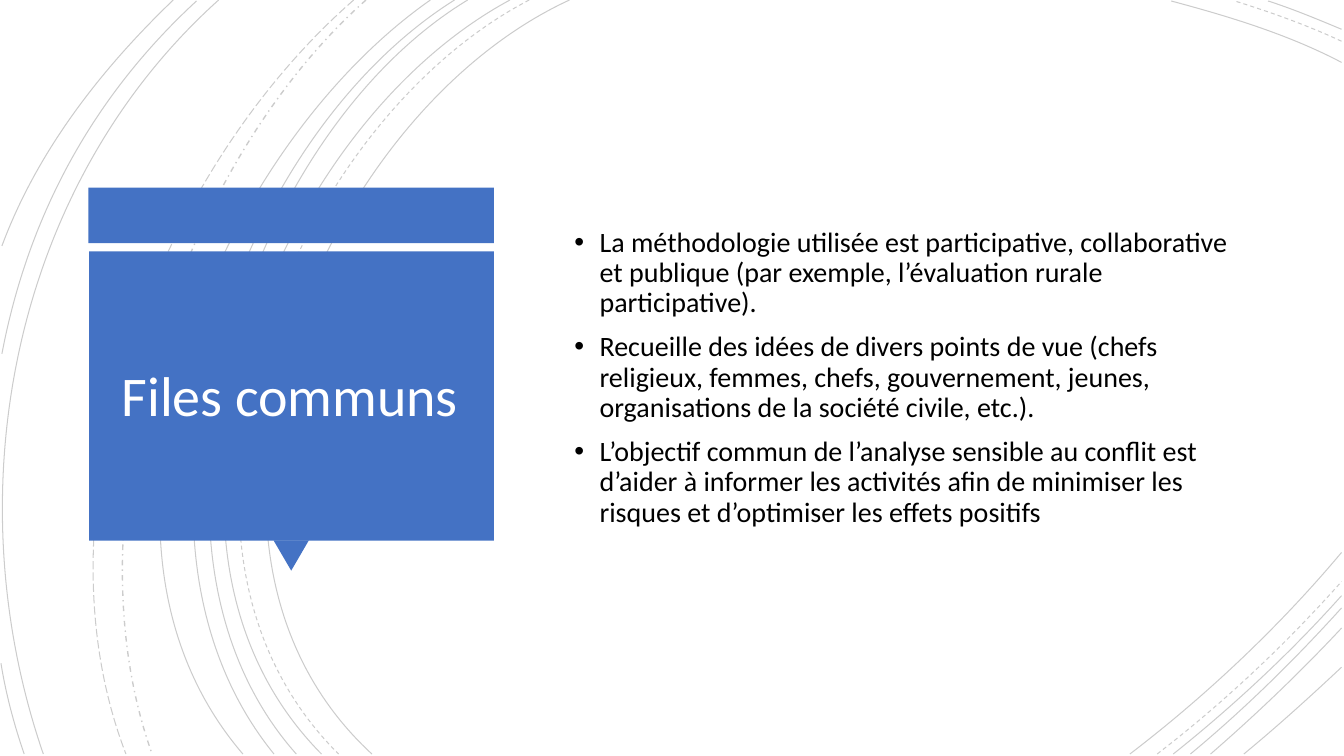
import pptx
import pptx.dml.color
import pptx.enum.dml
import pptx.enum.shapes
import pptx.enum.text
import pptx.oxml
import pptx.oxml.ns
import pptx.util
from lxml import etree

Pt = pptx.util.Pt
qn = pptx.oxml.ns.qn
DASH = pptx.enum.dml.MSO_LINE
SHAPE = pptx.enum.shapes.MSO_SHAPE
ALIGN = pptx.enum.text.PP_ALIGN

FONT = "Calibri"
BLUE, WHITE, BLACK = "4472C4", "FFFFFF", "000000"
RIGHT, BOTTOM = 958.3, 538.6  # where the arcs leave the slide

TITLE = "Files communs"
POINTS = [
    "La méthodologie utilisée est participative, collaborative et publique "
    "(par exemple, l’évaluation rurale participative).",
    "Recueille des idées de divers points de vue (chefs religieux, femmes, chefs, "
    "gouvernement, jeunes, organisations de la société civile, etc.).",
    "L’objectif commun de l’analyse sensible au conflit est d’aider à informer les "
    "activités afin de minimiser les risques et d’optimiser les effets positifs",
]

# Each arc: start, two control points, end (x, y pairs), by dash style and width
ARCS = {
    (DASH.SOLID, 0.75): [
        # Long arcs on the left
        (406.8, 0, 226.8, 82.8, 103, 388.8, 265.7, BOTTOM),
        (364.3, 0, 194.4, 91.4, 79.2, 386.6, 229.7, BOTTOM),
        (334.1, 0, 175.7, 95.8, 79.2, 389.5, 211.7, BOTTOM),
        (324.7, 0, 166.3, 99.4, 69.8, 383.8, 195.8, BOTTOM),
        (307.4, 0, 156.2, 105.8, 38.2, 380.9, 173.5, BOTTOM),
        (156.2, 0, 7.9, 133.2, -33.1, 352.8, 31, BOTTOM),
        # Short arcs at the left edge
        (140.4, 0.7, 66.2, 69.1, 20.2, 154.1, 1.4, 252.7),
        (0.7, 473.8, 4.3, 496.1, 10.1, 517.7, 17.3, BOTTOM),
        (123.8, 0, 72, 49.7, 26.6, 108, 1.4, 175.7),
        # Top right corner
        (RIGHT, 44.6, 920.2, 24.5, 877, 11.5, 836.6, 0.7),
        (RIGHT, 20.9, 941, 13.7, 923.8, 6.5, 905.8, 0.7),
        # Bottom right corner
        (807.1, BOTTOM, 861.8, 496.8, 913.7, 447.8, RIGHT, 394.6),
        (838.1, BOTTOM, 880.6, 504.7, 921.6, 466.6, RIGHT, 425.5),
        (850.3, BOTTOM, 888.5, 506.9, 924.5, 471.6, RIGHT, 434.2),
        (864.7, BOTTOM, 897.1, 510.5, 928.8, 480.2, RIGHT, 448.6),
        (888.5, BOTTOM, 912.2, 519.1, 935.3, 498.2, RIGHT, 476.6),
    ],
    (DASH.DASH, 0.75): [
        (378, 0, 205.2, 90, 88.6, 386.6, 241.9, BOTTOM),
        (RIGHT, 29.5, 933.8, 18, 907.2, 8.6, 882, 0.7),
        (826.6, BOTTOM, 873.4, 502.6, 918, 460.8, RIGHT, 415.4),
    ],
    (DASH.DASH_DOT, 1): [(261.4, 0, 126.7, 119.5, 46.8, 366.5, 108.7, BOTTOM)],
    (DASH.LONG_DASH, 0.75): [(252.7, 0, 113, 121.7, 20.9, 359.3, 90, BOTTOM)],
}


def color(hex_code):
    return pptx.dml.color.RGBColor.from_string(hex_code)


def add_arc(slide, coords, dash, width):
    start, *rest = [(Pt(x), Pt(y)) for x, y in zip(coords[::2], coords[1::2])]
    builder = slide.shapes.build_freeform(*start, scale=1.0)
    builder.add_line_segments(rest, close=False)
    arc = builder.convert_to_shape()
    arc.shadow.inherit = False
    arc.fill.background()
    arc.line.color.rgb = color(BLACK)
    arc.line.width = Pt(width)
    arc.line.dash_style = dash
    # Turn the three segments into one Bézier curve
    outline = next(arc._element.iter(qn("a:path")))
    curve = etree.SubElement(outline, qn("a:cubicBezTo"))
    for segment in outline.findall(qn("a:lnTo")):
        curve.append(segment[0])
        outline.remove(segment)
    # 20 % opacity
    stroke = next(next(arc._element.iter(qn("a:ln"))).iter(qn("a:srgbClr")))
    etree.SubElement(stroke, qn("a:alpha"), val="20000")


def add_block(slide, preset, left, top, width, height, rotation=0):
    block = slide.shapes.add_shape(preset, Pt(left), Pt(top), Pt(width), Pt(height))
    block.shadow.inherit = False
    block.fill.solid()
    block.fill.fore_color.rgb = color(BLUE)
    block.line.fill.background()
    block.rotation = rotation


def add_text(slide, lines, left, top, width, height, size, hex_code, align):
    box = slide.shapes.add_textbox(Pt(left), Pt(top), Pt(width), Pt(height))
    frame = box.text_frame
    frame.word_wrap = True
    frame.vertical_anchor = pptx.enum.text.MSO_ANCHOR.MIDDLE
    frame.text = "\n".join(lines)
    for paragraph in frame.paragraphs:
        paragraph.alignment = align
        paragraph.line_spacing = 0.9
        paragraph.font.name = FONT
        paragraph.font.size = Pt(size)
        paragraph.font.color.rgb = color(hex_code)
    return frame.paragraphs


def add_bullet(paragraph):
    paragraph.space_before = Pt(10)
    props = paragraph._p.get_or_add_pPr()
    props.set("marL", str(Pt(18)))
    props.set("indent", str(-Pt(18)))
    bullet_font = pptx.oxml.parse_xml(
        f'<a:buFont {pptx.oxml.ns.nsdecls("a")} typeface="Arial"/>')
    bullet = pptx.oxml.parse_xml(f'<a:buChar {pptx.oxml.ns.nsdecls("a")} char="•"/>')
    defaults = props.find(qn("a:defRPr"))
    defaults.addprevious(bullet_font)
    defaults.addprevious(bullet)


def main():
    deck = pptx.Presentation()
    deck.slide_width, deck.slide_height = Pt(960), Pt(540)
    slide = deck.slides.add_slide(deck.slide_layouts[6])

    # Background arcs
    for (dash, width), arcs in ARCS.items():
        for coords in arcs:
            add_arc(slide, coords, dash, width)

    # Blue title panel: band, pointer, main block
    add_block(slide, SHAPE.RECTANGLE, 63.2, 134, 289.6, 39.7)
    add_block(slide, SHAPE.ISOSCELES_TRIANGLE, 195.4, 386, 25.2, 21.6, rotation=180)
    add_block(slide, SHAPE.RECTANGLE, 63.6, 179.5, 289.2, 206.8)
    add_text(slide, [TITLE], 71.3, 190, 271.4, 188.6, 40, WHITE, ALIGN.CENTER)

    # Bulleted points
    for paragraph in add_text(slide, POINTS, 403.2, 63.4, 494.6, 413.3, 20, BLACK, ALIGN.LEFT):
        add_bullet(paragraph)

    deck.save("out.pptx")


if __name__ == "__main__":
    main()
